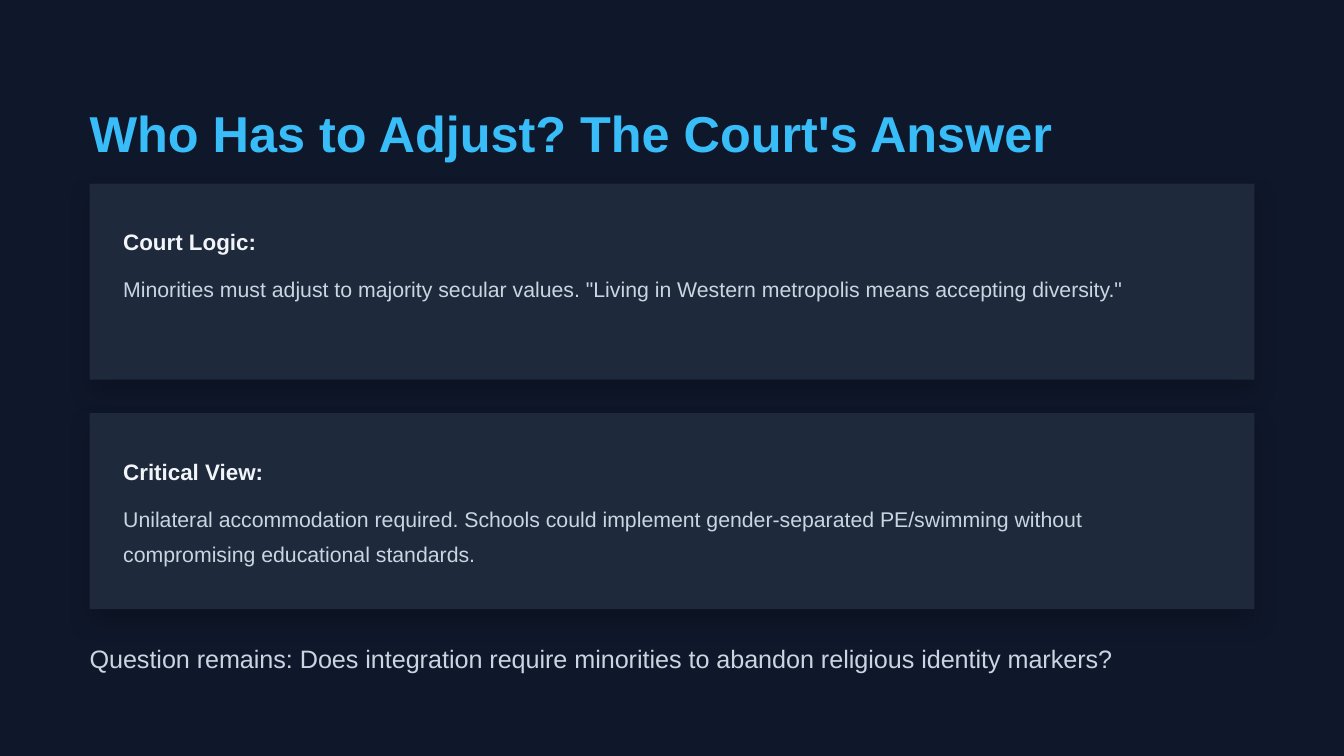
import pptx
import pptx.dml.color
import pptx.enum.shapes
import pptx.oxml
import pptx.oxml.ns
import pptx.util

Pt = pptx.util.Pt
RGBColor = pptx.dml.color.RGBColor

NAVY = RGBColor(0x0F, 0x17, 0x2A)
SLATE = RGBColor(0x1E, 0x29, 0x3B)
SKY = RGBColor(0x38, 0xBD, 0xF8)
WHITE = RGBColor(0xF1, 0xF5, 0xF9)
GREY = RGBColor(0xCB, 0xD5, 0xE1)

TITLE = "Who Has to Adjust? The Court's Answer"
CARDS = [
    ("Court Logic:",
     'Minorities must adjust to majority secular values. '
     '"Living in Western metropolis means accepting diversity."'),
    ("Critical View:",
     "Unilateral accommodation required. Schools could implement "
     "gender-separated PE/swimming without compromising educational standards."),
]
QUESTION = ("Question remains: Does integration require minorities to abandon "
            "religious identity markers?")

MARGIN, CARD_TOP, CARD_W, CARD_H, GAP, PAD = 48, 98.4, 624, 105, 18, 18
BODY_OFFSET = 44.2

SHADOW = (
    '<a:effectLst %s><a:outerShdw blurRad="%d" dist="%d" dir="5400000" '
    'algn="bl" rotWithShape="0"><a:srgbClr val="000000"><a:alpha val="20000"/>'
    '</a:srgbClr></a:outerShdw></a:effectLst>'
    % (pptx.oxml.ns.nsdecls("a"), Pt(12), Pt(6)))


def add_text(s, text, left, top, width, height, size, color, bold=False, spacing=1.4):
    tf = s.shapes.add_textbox(Pt(left), Pt(top), Pt(width), Pt(height)).text_frame
    tf.word_wrap = True
    tf.margin_left = tf.margin_top = tf.margin_right = tf.margin_bottom = 0
    p = tf.paragraphs[0]
    p.text = text
    p.line_spacing = spacing
    p.font.name = "Arial"
    p.font.size = Pt(size)
    p.font.bold = bold
    p.font.color.rgb = color


def add_card(s, top, heading, body):
    sp = s.shapes.add_shape(pptx.enum.shapes.MSO_SHAPE.RECTANGLE,
                            Pt(MARGIN), Pt(top), Pt(CARD_W), Pt(CARD_H))
    sp.fill.solid()
    sp.fill.fore_color.rgb = SLATE
    sp.line.fill.background()
    sp._element.spPr.append(pptx.oxml.parse_xml(SHADOW))
    left, width = MARGIN + PAD, CARD_W - 2 * PAD
    add_text(s, heading, left, top + PAD, width, 16.8, 12, WHITE, bold=True)
    add_text(s, body, left, top + BODY_OFFSET, width, 32, 11.4, GREY)


prs = pptx.Presentation()
prs.slide_width, prs.slide_height = Pt(720), Pt(405)
s = prs.slides.add_slide(prs.slide_layouts[6])
s.background.fill.solid()
s.background.fill.fore_color.rgb = NAVY

add_text(s, TITLE, MARGIN, 48, 636, 32.4, 27, SKY, bold=True, spacing=1.2)
for i, (heading, body) in enumerate(CARDS):
    add_card(s, CARD_TOP + i * (CARD_H + GAP), heading, body)
add_text(s, QUESTION, MARGIN, 338.4, 636, 18.9, 13.5, GREY)

prs.save("out.pptx")
